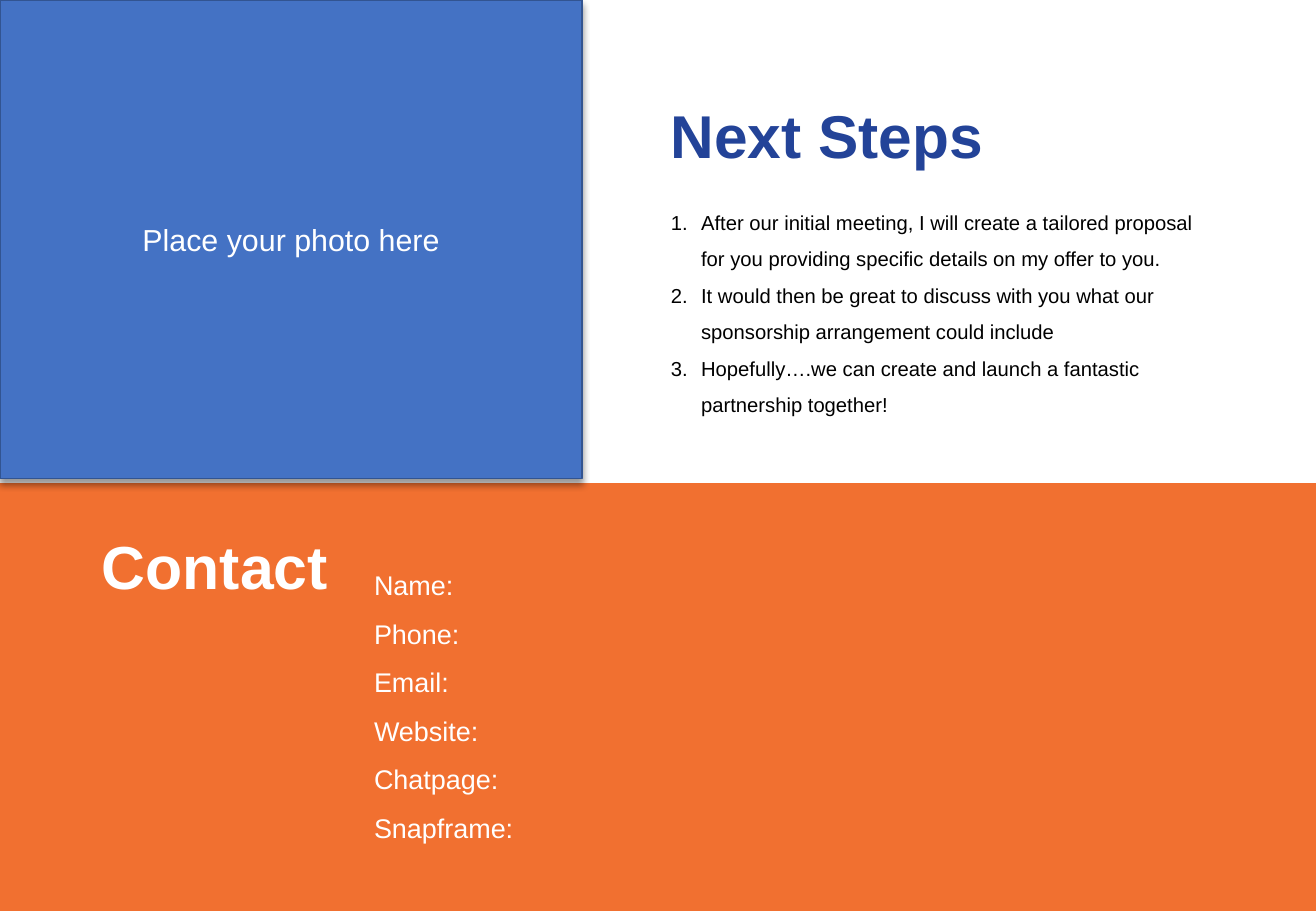
from dataclasses import dataclass

from lxml.etree import SubElement
from pptx import Presentation
from pptx.dml.color import RGBColor
from pptx.enum.shapes import MSO_SHAPE as Shape
from pptx.enum.text import MSO_ANCHOR as Anchor, MSO_AUTO_SIZE as AutoSize, PP_ALIGN as Align
from pptx.oxml.ns import qn
from pptx.util import Inches, Pt

WHITE = "FFFFFF"
STEPS = [
    "After our initial meeting, I will create a tailored proposal for you "
    "providing specific details on my offer to you.",
    "It would then be great to discuss with you what our sponsorship "
    "arrangement could include",
    "Hopefully….we can create and launch a fantastic partnership together!",
]
CONTACT_FIELDS = ["Name:", "Phone:", "Email:", "Website:", "Chatpage:", "Snapframe:"]


@dataclass
class Box:
    left: float
    top: float
    width: float
    height: float

    def emu(self) -> list:
        return [Inches(v) for v in (self.left, self.top, self.width, self.height)]


@dataclass
class Style:
    size: float
    color: str
    bold: bool = False
    spacing: float = 1.0
    anchor: Anchor = Anchor.TOP
    align: Align = Align.LEFT


def rgb(value: str) -> RGBColor:
    return RGBColor.from_string(value)


def place(sp, box: Box) -> None:
    sp.left, sp.top, sp.width, sp.height = box.emu()


def write(sp, lines: list[str], style: Style) -> None:
    tf = sp.text_frame
    tf.text = "\n".join(lines)
    tf.word_wrap = True
    tf.auto_size = AutoSize.NONE
    tf.vertical_anchor = style.anchor
    for p in tf.paragraphs:
        p.alignment = style.align
        p.line_spacing = style.spacing
        p.space_before = Pt(0)
        for r in p.runs:
            r.font.name = "Arial"
            r.font.size = Pt(style.size)
            r.font.bold = style.bold
            r.font.color.rgb = rgb(style.color)


def number(sp) -> None:
    for p in sp.text_frame.paragraphs:
        pPr = p._p.get_or_add_pPr()
        pPr.set("marL", str(Inches(0.25)))
        pPr.set("indent", str(Inches(-0.25)))
        SubElement(pPr, qn("a:buFont"), typeface="+mj-lt")
        SubElement(pPr, qn("a:buAutoNum"), type="arabicPeriod")


def add_panel(s, box: Box, fill: str, line: str):
    sp = s.shapes.add_shape(Shape.RECTANGLE, *box.emu())
    sp.shadow.inherit = False
    sp.fill.solid()
    sp.fill.fore_color.rgb = rgb(fill)
    sp.line.color.rgb = rgb(line)
    sp.line.width = Pt(1)
    return sp


def add_drop_shadow(sp) -> None:
    effects = sp._element.spPr.find(qn("a:effectLst"))
    shadow = SubElement(effects, qn("a:outerShdw"), blurRad=str(Pt(4)), dist=str(Pt(3)),
                        dir="5400000", algn="t", rotWithShape="0")
    color = SubElement(shadow, qn("a:srgbClr"), val="000000")
    SubElement(color, qn("a:alpha"), val="40000")


def main() -> None:
    prs = Presentation()
    prs.slide_width, prs.slide_height = Inches(10.83), Inches(7.5)
    s = prs.slides.add_slide(prs.slide_layouts[1])

    title, steps = s.shapes.title, s.placeholders[1]
    place(title, Box(5.42, 0.42, 5.41, 1.45))
    write(title, ["Next Steps"], Style(35.8, "234398", True, 0.9, Anchor.MIDDLE))
    place(steps, Box(5.42, 1.58, 4.67, 2.03))
    write(steps, STEPS, Style(12, "000000", spacing=1.5))
    number(steps)

    add_panel(s, Box(0, 3.98, 10.83, 3.52), "F17030", "F17030")
    heading = s.shapes.add_textbox(*Box(0.74, 4.1, 9.34, 1.19).emu())
    write(heading, ["Contact"], Style(36, WHITE, True, 0.9, Anchor.MIDDLE))
    fields = s.shapes.add_textbox(*Box(2.98, 4.5, 7.85, 2.03).emu())
    write(fields, CONTACT_FIELDS, Style(16, WHITE, spacing=1.5))

    photo = add_panel(s, Box(0, 0, 4.79, 3.94), "4472C4", "325491")
    add_drop_shadow(photo)
    write(photo, ["Place your photo here"],
          Style(18, WHITE, anchor=Anchor.MIDDLE, align=Align.CENTER))

    prs.save("out.pptx")


if __name__ == "__main__":
    main()
